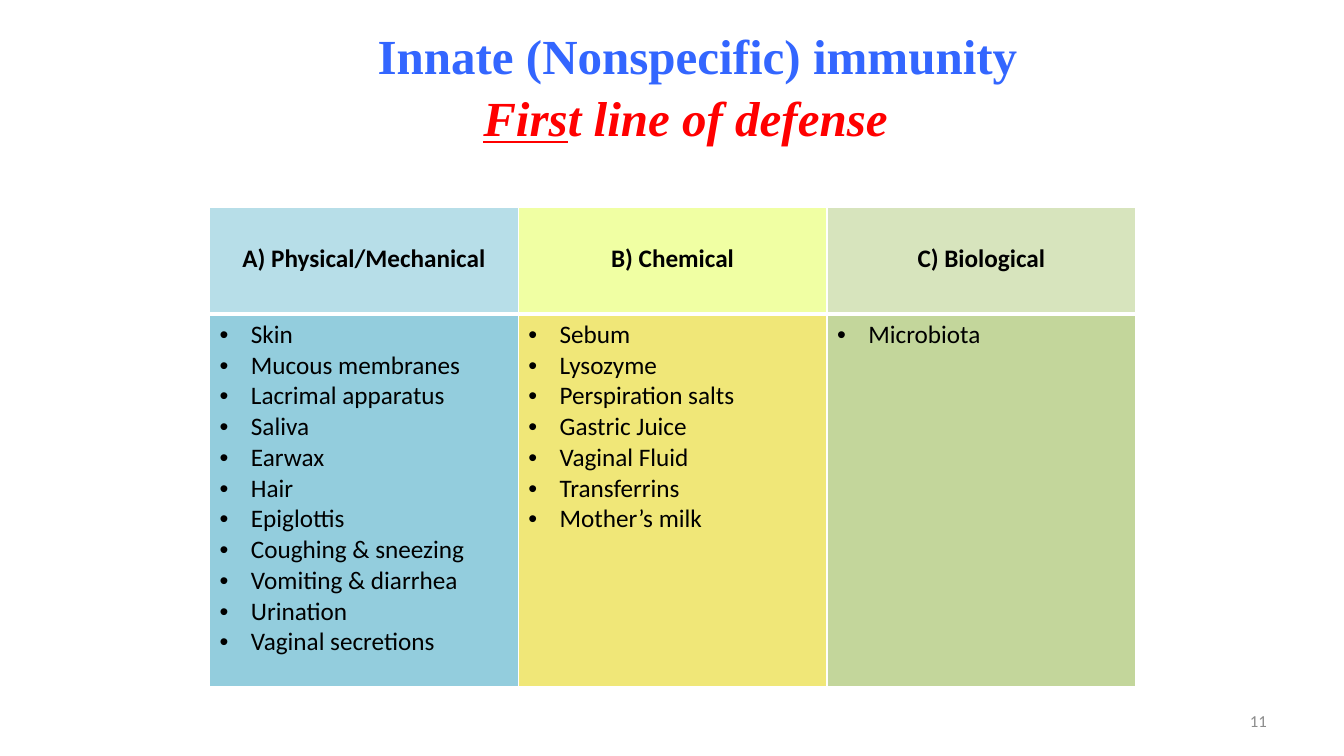
"""Build a slide with a table of the first-line defenses of innate immunity."""
from lxml.etree import SubElement
from pptx import Presentation
from pptx.dml.color import RGBColor
from pptx.enum.text import MSO_ANCHOR as ANCHOR, PP_ALIGN as ALIGN
from pptx.oxml import parse_xml
from pptx.oxml.ns import nsdecls, qn
from pptx.util import Cm, Pt

BLUE = RGBColor(0x33, 0x66, 0xFF)
RED = RGBColor(0xFF, 0x00, 0x00)
BLACK = RGBColor(0x00, 0x00, 0x00)
GRAY = RGBColor(0x8C, 0x8C, 0x8C)

TITLE = "Innate (Nonspecific) immunity"
SUBTITLE = [("Firs", True), ("t line of defense", False)]
PAGE = "11"
DEFENSES = [
    ("A) Physical/Mechanical", RGBColor(0xB7, 0xDE, 0xE8), RGBColor(0x93, 0xCD, 0xDD),
     ["Skin", "Mucous membranes", "Lacrimal apparatus", "Saliva", "Earwax", "Hair",
      "Epiglottis", "Coughing & sneezing", "Vomiting & diarrhea", "Urination",
      "Vaginal secretions"]),
    ("B) Chemical", RGBColor(0xF0, 0xFF, 0xA3), RGBColor(0xF0, 0xE7, 0x78),
     ["Sebum", "Lysozyme", "Perspiration salts", "Gastric Juice", "Vaginal Fluid",
      "Transferrins", "Mother’s milk"]),
    ("C) Biological", RGBColor(0xD7, 0xE4, 0xBD), RGBColor(0xC3, 0xD6, 0x9B),
     ["Microbiota"]),
]
COL_W, HEAD_H, BODY_H = 7.78, 2.69, 9.39


def style(r, font, size, color, bold=False, italic=False):
    r.font.name, r.font.size = font, Pt(size)
    r.font.color.rgb = color
    r.font.bold, r.font.italic = bold, italic


def add_text(slide, left, top, width, height, anchor):
    tf = slide.shapes.add_textbox(Cm(left), Cm(top), Cm(width), Cm(height)).text_frame
    tf.word_wrap = True
    tf.vertical_anchor = anchor
    return tf


def add_border(cell, top, bottom):
    widths = {"lnL": 1, "lnR": 1, "lnT": top, "lnB": bottom}
    tcPr = cell._tc.get_or_add_tcPr()
    for i, (side, width) in enumerate(widths.items()):
        tcPr.insert(i, parse_xml(
            f'<a:{side} {nsdecls("a")} w="{Pt(width)}"><a:solidFill>'
            f'<a:srgbClr val="FFFFFF"/></a:solidFill></a:{side}>'))


def fill_cell(cell, lines, color, header):
    cell.fill.solid()
    cell.fill.fore_color.rgb = color
    cell.text_frame.text = "\n".join(lines)
    for p in cell.text_frame.paragraphs:
        style(p.runs[0], "Calibri", 18, BLACK, bold=header)
        if header:
            p.alignment = ALIGN.CENTER
        else:
            pPr = p._p.get_or_add_pPr()
            pPr.set("marL", str(Cm(0.79)))
            pPr.set("indent", str(-Cm(0.79)))
            SubElement(pPr, qn("a:buFont")).set("typeface", "Arial")
            SubElement(pPr, qn("a:buChar")).set("char", "•")
    if header:
        cell.vertical_anchor = ANCHOR.MIDDLE
        cell.margin_bottom = Cm(0.25)
    add_border(cell, 1 if header else 3, 3 if header else 1)


def add_title(slide):
    tf = add_text(slide, 5, 0.56, 23.9, 3.25, ANCHOR.BOTTOM)
    p = tf.paragraphs[0]
    p.text = TITLE
    style(p.runs[0], "Times New Roman", 35, BLUE, bold=True)
    p = tf.add_paragraph()
    p.space_before = Pt(2)
    for text, underline in SUBTITLE:
        r = p.add_run()
        r.text = text
        style(r, "Times New Roman", 35, RED, bold=True, italic=True)
        r.font.underline = underline
    for p, indent in zip(tf.paragraphs, (1.27, 0.66)):
        p.alignment = ALIGN.CENTER
        p._p.get_or_add_pPr().set("marL", str(Cm(indent)))


def add_defenses(slide):
    cols = len(DEFENSES)
    table = slide.shapes.add_table(2, cols, Cm(5.28), Cm(5.23), Cm(COL_W * cols),
                                   Cm(HEAD_H + BODY_H)).table
    table.rows[0].height, table.rows[1].height = Cm(HEAD_H), Cm(BODY_H)
    for i, (heading, head_color, body_color, items) in enumerate(DEFENSES):
        table.columns[i].width = Cm(COL_W)
        fill_cell(table.cell(0, i), [heading], head_color, True)
        fill_cell(table.cell(1, i), items, body_color, False)


def main():
    prs = Presentation()
    prs.slide_width, prs.slide_height = Cm(33.87), Cm(19.05)
    slide = prs.slides.add_slide(prs.slide_layouts[6])
    add_title(slide)
    add_defenses(slide)
    p = add_text(slide, 24.28, 17.65, 7.9, 1.02, ANCHOR.MIDDLE).paragraphs[0]
    p.text = PAGE
    p.alignment = ALIGN.RIGHT
    style(p.runs[0], "Calibri", 12, GRAY)
    prs.save("out.pptx")


if __name__ == "__main__":
    main()
